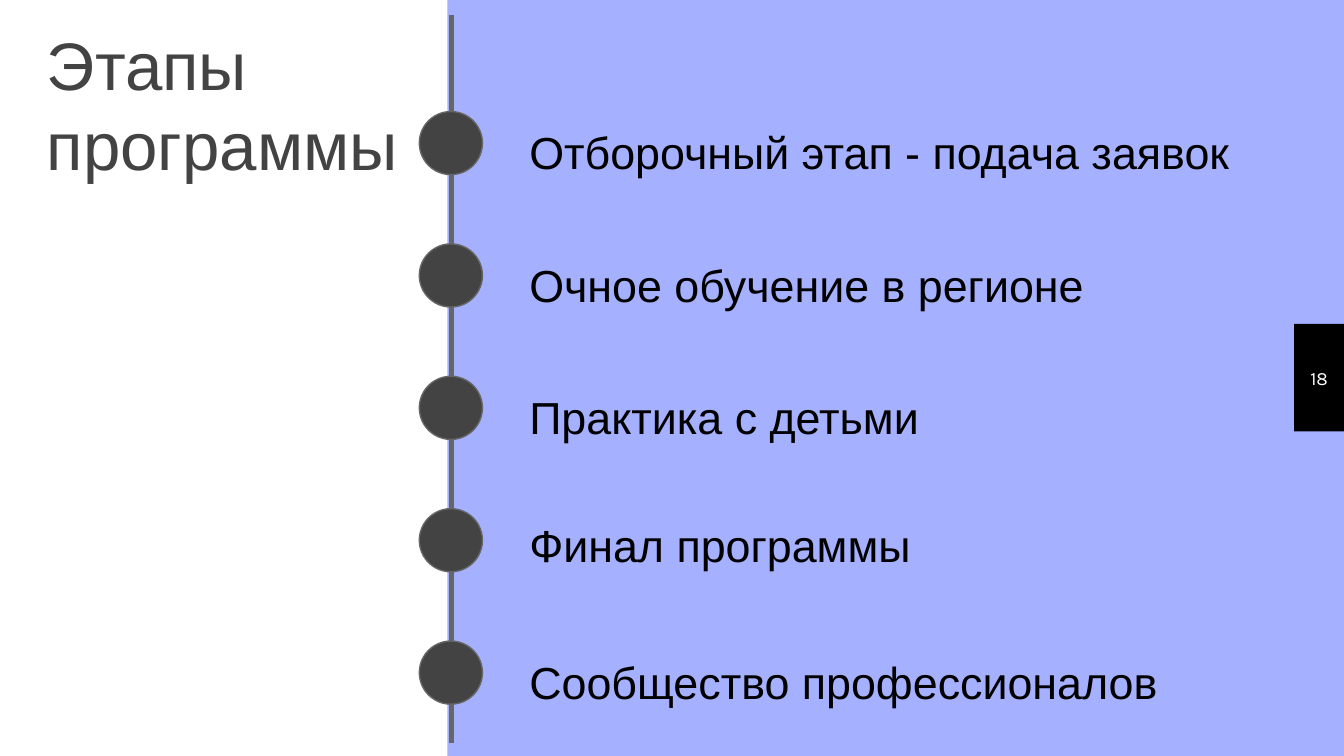
from pptx import Presentation
from pptx.dml.color import RGBColor
from pptx.enum.shapes import MSO_CONNECTOR, MSO_SHAPE
from pptx.enum.text import MSO_ANCHOR, PP_ALIGN
from pptx.oxml.ns import qn
from pptx.util import Inches, Pt
from lxml.etree import SubElement

SLIDE_WIDTH = Inches(10)
SLIDE_HEIGHT = SLIDE_WIDTH * 9 // 16
# Stage name and the vertical nudge of its label
STAGES = [
    ("Отборочный этап - подача заявок", 0),
    ("Очное обучение в регионе", 0),
    ("Практика с детьми", 0),
    ("Финал программы", -0.03),
    ("Сообщество профессионалов", 0),
]
FIRST_TOP = 0.83
LAST_TOP = 4.77
STAGE_STEP = (LAST_TOP - FIRST_TOP) / (len(STAGES) - 1)
MARKER_SIZE = 0.47


def color(hex_value):
    return RGBColor.from_string(hex_value)


def set_attributes(target, values):
    for name, value in values.items():
        setattr(target, name, value)


def add_block(slide, kind, box, fill, line=None):
    shape = slide.shapes.add_shape(kind, *map(Inches, box))
    shape.shadow.inherit = False
    shape.fill.solid()
    shape.fill.fore_color.rgb = color(fill)
    if line:
        shape.line.color.rgb = color(line)
        shape.line.width = Pt(0.75)
    else:
        shape.line.fill.background()
    return shape


def add_axis(slide, x, top, bottom):
    axis = slide.shapes.add_connector(
        MSO_CONNECTOR.STRAIGHT, *map(Inches, (x, top, x, bottom)))
    axis.line.color.rgb = color("666666")
    axis.line.width = Pt(3)
    SubElement(axis._element.spPr, qn("a:effectLst"))


def add_text(slide, box, text, size, hex_value, font="Arial",
             anchor=MSO_ANCHOR.TOP, align=PP_ALIGN.LEFT):
    frame = slide.shapes.add_textbox(*map(Inches, box)).text_frame
    margins = ("margin_left", "margin_top", "margin_right", "margin_bottom")
    set_attributes(frame, dict.fromkeys(margins, Inches(0.1)))
    set_attributes(frame, {"word_wrap": True, "vertical_anchor": anchor,
                           "text": text})
    for paragraph in frame.paragraphs:
        paragraph.alignment = align
        for run in paragraph.runs:
            set_attributes(run.font, {"name": font, "size": Pt(size)})
            run.font.color.rgb = color(hex_value)


def main():
    presentation = Presentation()
    set_attributes(presentation, {"slide_width": SLIDE_WIDTH,
                                  "slide_height": SLIDE_HEIGHT})
    slide = presentation.slides.add_slide(presentation.slide_layouts[6])

    # Background, left panel and page number
    slide.background.fill.solid()
    slide.background.fill.fore_color.rgb = color("A5B0FE")
    number_box = (9.63, 2.41, 0.37, 0.8)
    add_block(slide, MSO_SHAPE.RECTANGLE, number_box, "000000")
    panel = add_block(slide, MSO_SHAPE.RECTANGLE, (0, 0, 3.33, 5.62), "FFFFFF")
    panel.height = SLIDE_HEIGHT
    add_text(slide, number_box, "18", 10, "FFFFFF", font="Karla",
             anchor=MSO_ANCHOR.MIDDLE, align=PP_ALIGN.CENTER)

    # Timeline with one marker and label per stage
    add_axis(slide, 3.36, 0.11, 5.53)
    for index, (stage, nudge) in enumerate(STAGES):
        top = FIRST_TOP + index * STAGE_STEP
        add_block(slide, MSO_SHAPE.OVAL, (3.12, top, MARKER_SIZE, MARKER_SIZE),
                  "434343", line="666666")
        add_text(slide, (3.84, top + nudge, 5.8, MARKER_SIZE), stage, 24,
                 "000000")

    # Title
    add_text(slide, (0.25, 0.53, 5.62, 0.94), "Этапы \vпрограммы", 36, "434343",
             anchor=MSO_ANCHOR.BOTTOM)

    presentation.save("out.pptx")


if __name__ == "__main__":
    main()
